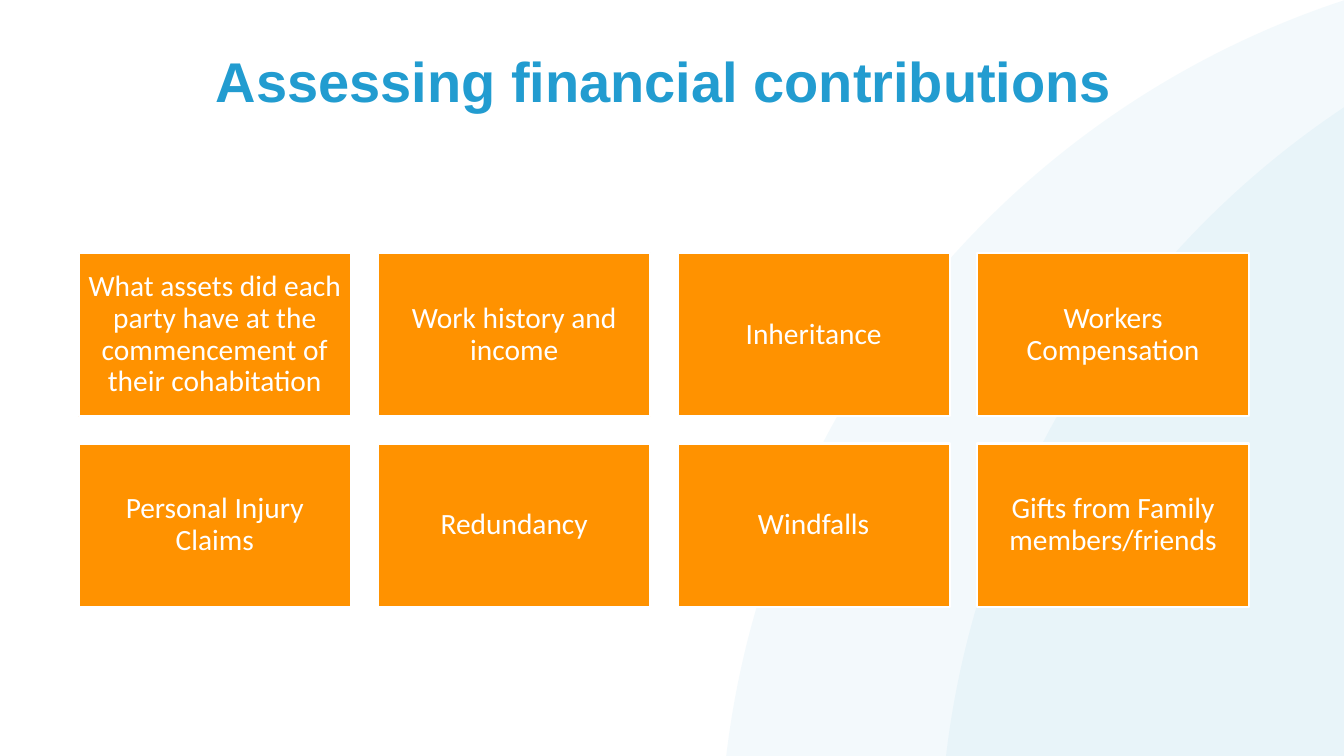
from lxml.etree import SubElement
from pptx import Presentation
from pptx.dml.color import RGBColor
from pptx.enum.shapes import MSO_SHAPE
from pptx.enum.text import MSO_ANCHOR, PP_ALIGN
from pptx.oxml.ns import qn
from pptx.util import Inches, Pt

COLORS = {"blue": "229CD0", "orange": "FF9200", "white": "FFFFFF"}
TITLE_FONT = {"name": "Arial", "size": Pt(40), "bold": True}
CARD_FONT = {"name": "Calibri", "size": Pt(21), "bold": False}
CARDS = [
    "What assets did each party have at the commencement of their cohabitation",
    "Work history and income",
    "Inheritance",
    "Workers Compensation",
    "Personal Injury Claims",
    "Redundancy",
    "Windfalls",
    "Gifts from Family members/friends",
]


def write_text(s, text, font, color, anchor):
    tf = s.text_frame
    tf.word_wrap = True
    tf.vertical_anchor = anchor
    p = tf.paragraphs[0]
    p.alignment = PP_ALIGN.CENTER
    p.line_spacing = 0.9
    r = p.add_run()
    r.text = text
    for name, value in font.items():
        setattr(r.font, name, value)
    r.font.color.rgb = RGBColor.from_string(COLORS[color])


def add_filled(kind, left, top, width, height, color):
    s = slide.shapes.add_shape(kind, Inches(left), Inches(top), Inches(width), Inches(height))
    s.shadow.inherit = False
    s.fill.solid()
    s.fill.fore_color.rgb = RGBColor.from_string(COLORS[color])
    return s


prs = Presentation()
prs.slide_width, prs.slide_height = Inches(13.33), Inches(7.5)
slide = prs.slides.add_slide(prs.slide_layouts[5])

# Pale background circles, sent behind the title
for i, left in enumerate((7.14, 9.32)):
    circle = add_filled(MSO_SHAPE.OVAL, left, -0.45, 18.02, 18.02, "blue")
    circle.line.fill.background()
    rgb = circle.fill._xPr.find(qn("a:solidFill")).find(qn("a:srgbClr"))
    SubElement(rgb, qn("a:alpha"), val="5000")
    slide.shapes._spTree.insert(2 + i, circle._element)

# Title
title = slide.shapes.title
title.left, title.top = Inches(0.77), Inches(0.49)
title.width, title.height = Inches(11.62), Inches(0.97)
write_text(title, "Assessing financial contributions", TITLE_FONT, "blue", MSO_ANCHOR.TOP)

# Grid of contribution cards, four to a row
for i, text in enumerate(CARDS):
    row, col = divmod(i, 4)
    card = add_filled(MSO_SHAPE.RECTANGLE, 0.78 + 2.97 * col, 2.51 + 1.89 * row, 2.7, 1.62, "orange")
    card.line.color.rgb = RGBColor.from_string(COLORS["white"])
    card.line.width = Pt(1.5)
    for side in ("left", "right", "top", "bottom"):
        setattr(card.text_frame, f"margin_{side}", Inches(0.09))
    write_text(card, text, CARD_FONT, "white", MSO_ANCHOR.MIDDLE)

prs.save("out.pptx")
